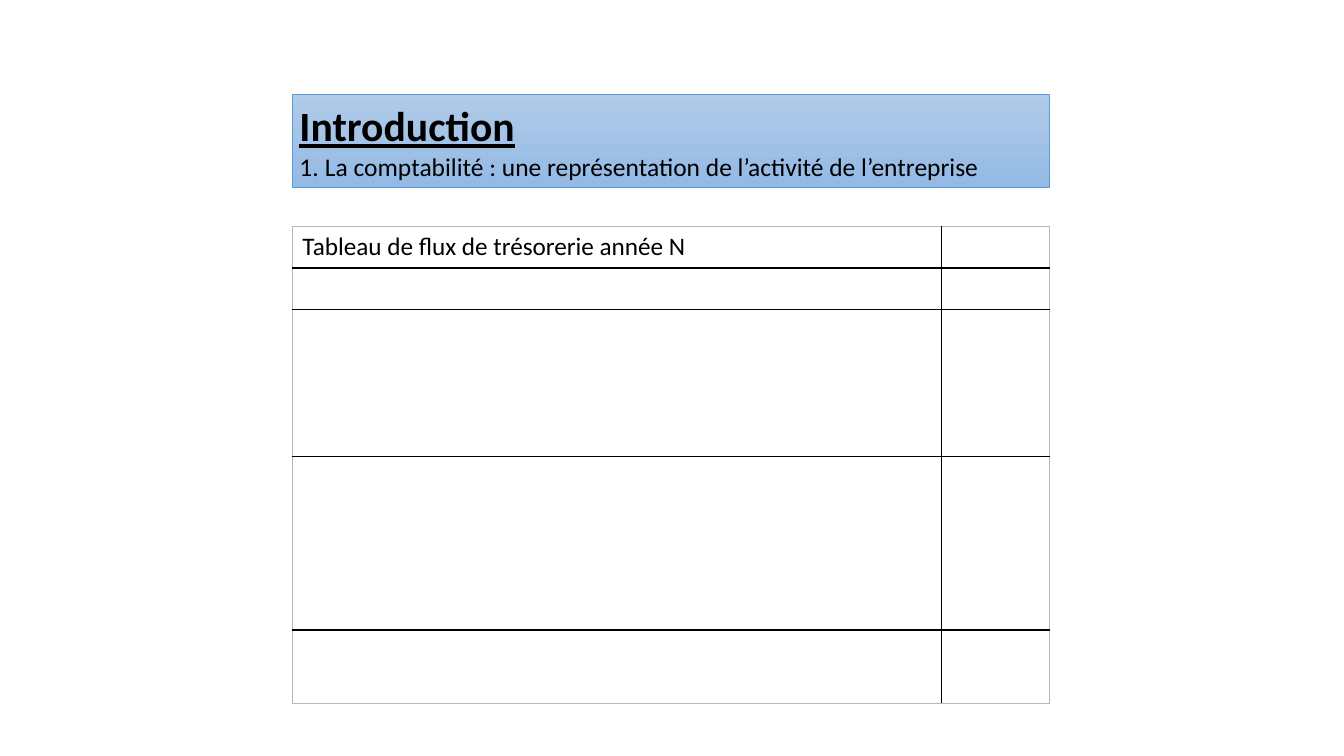
"""Build the introduction slide with its heading band and cash flow table."""
import pptx
import pptx.dml.color
import pptx.enum.dml
import pptx.enum.shapes
import pptx.enum.text
import pptx.oxml
import pptx.oxml.ns
import pptx.util

Inches = pptx.util.Inches
Pt = pptx.util.Pt
RGBColor = pptx.dml.color.RGBColor

BLACK = RGBColor(0x00, 0x00, 0x00)
GREY = RGBColor(0xB8, 0xB8, 0xB8)
BAND_LINE = RGBColor(0x5B, 0x9B, 0xD5)
BAND_GRADIENT = (RGBColor(0xB1, 0xCB, 0xE9), RGBColor(0x93, 0xB9, 0xE4))

HEADING = "Introduction"
SUBHEADING = (
    ("1.", 18.2),
    (" ", 18.9),
    ("La comptabilité : une représentation de l’activité de l’entreprise", 18.2),
)
CASH_FLOW_ROWS = (
    ("Tableau de flux de trésorerie année N", ""),
    ("", ""),
    ("", ""),
    ("", ""),
    ("", ""),
)
COLUMN_WIDTHS = (6.44, 1.07)
ROW_HEIGHTS = (0.41, 0.41, 1.46, 1.72, 0.73)
RULE_WIDTHS = (1.5, 1.5, 1, 1)

LEFT = 2.9
WIDTH = sum(COLUMN_WIDTHS)
BAND_TOP, BAND_HEIGHT = 0.94, 0.92
TABLE_TOP = 2.25


def add_text(paragraph, text, size=18, bold=False, underline=False):
    run = paragraph.add_run()
    run.text = text
    run.font.name = "Calibri"
    run.font.size = Pt(size)
    run.font.bold = bold
    run.font.underline = underline
    run.font.color.rgb = BLACK


def add_border(cell, side, color, width):
    cell._tc.get_or_add_tcPr().append(pptx.oxml.parse_xml(
        f'<a:ln{side} {pptx.oxml.ns.nsdecls("a")} w="{int(Pt(width))}">'
        f'<a:solidFill><a:srgbClr val="{color}"/></a:solidFill></a:ln{side}>'))


def add_band(slide):
    band = slide.shapes.add_shape(
        pptx.enum.shapes.MSO_SHAPE.RECTANGLE,
        Inches(LEFT), Inches(BAND_TOP), Inches(WIDTH), Inches(BAND_HEIGHT))
    band.shadow.inherit = False
    band.fill.gradient()
    band.fill.gradient_angle = 270
    for stop, color in zip(band.fill.gradient_stops, BAND_GRADIENT):
        stop.color.rgb = color
    band.line.color.rgb = BAND_LINE
    band.line.width = Pt(0.5)

    frame = band.text_frame
    frame.word_wrap = True
    frame.vertical_anchor = pptx.enum.text.MSO_ANCHOR.MIDDLE
    frame.margin_left = frame.margin_right = Inches(0.07)
    frame.margin_top = frame.margin_bottom = Inches(0.04)
    paragraph = frame.paragraphs[0]
    paragraph.alignment = pptx.enum.text.PP_ALIGN.LEFT
    add_text(paragraph, HEADING, size=29.7, bold=True, underline=True)
    paragraph.add_line_break()
    for text, size in SUBHEADING:
        add_text(paragraph, text, size=size)


def add_cash_flow(slide):
    table = slide.shapes.add_table(
        len(ROW_HEIGHTS), len(COLUMN_WIDTHS), Inches(LEFT), Inches(TABLE_TOP),
        Inches(WIDTH), Inches(sum(ROW_HEIGHTS))).table
    table.first_row = False
    table.horz_banding = False
    for column, width in zip(table.columns, COLUMN_WIDTHS):
        column.width = Inches(width)
    for row, height in zip(table.rows, ROW_HEIGHTS):
        row.height = Inches(height)

    outer = (GREY, 0.5)
    column_rules = [outer, (BLACK, 1), outer]
    row_rules = [outer, *((BLACK, width) for width in RULE_WIDTHS), outer]
    for r, texts in enumerate(CASH_FLOW_ROWS):
        for c, text in enumerate(texts):
            cell = table.cell(r, c)
            add_border(cell, "L", *column_rules[c])
            add_border(cell, "R", *column_rules[c + 1])
            add_border(cell, "T", *row_rules[r])
            add_border(cell, "B", *row_rules[r + 1])
            cell.fill.background()
            if text:
                add_text(cell.text_frame.paragraphs[0], text)


def main():
    deck = pptx.Presentation()
    deck.slide_width = Inches(13.33)
    deck.slide_height = Inches(7.5)
    slide = deck.slides.add_slide(deck.slide_layouts[6])
    add_band(slide)
    add_cash_flow(slide)
    deck.save("out.pptx")


if __name__ == "__main__":
    main()
